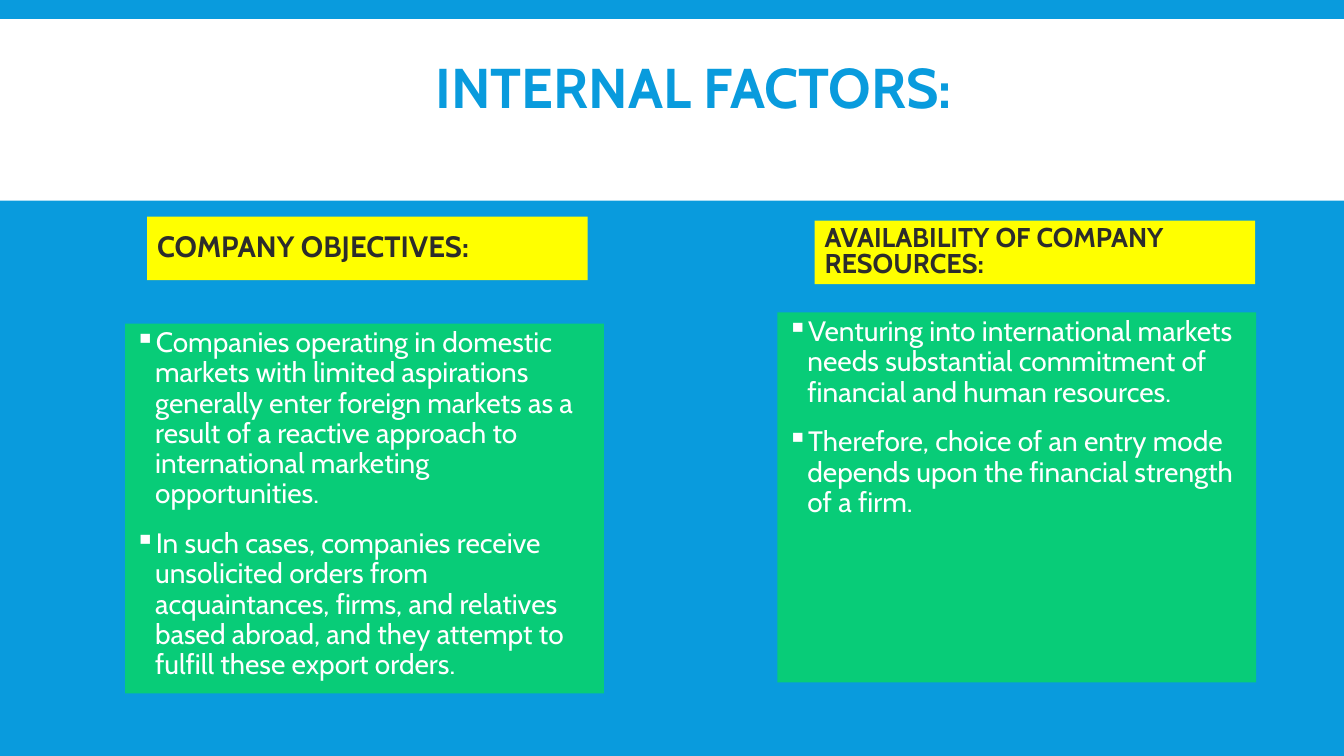
from dataclasses import dataclass

from lxml import etree
from pptx import Presentation
from pptx import util as u
from pptx.dml.color import RGBColor
from pptx.enum import shapes, text
from pptx.oxml import ns


@dataclass(frozen=True)
class Theme:
    font: str = "Cabin"
    blue: str = "099BDD"
    white: str = "FFFFFF"
    yellow: str = "FFFF00"
    green: str = "08CC78"
    dark: str = "2C2C2C"
    title: float = 40
    body: float = 20


THEME = Theme()
WIDE, HIGH = 13.33, 7.5
HEAD_W, HEAD_H = 4.37, 0.63
BODY_W, BODY_H = 4.75, 3.67

COLUMNS = [
    ((1.24, 2.15), (0.22, 1.06), "COMPANY OBJECTIVES:", 21, 0.9, [
        "Companies operating in domestic markets with limited aspirations generally enter foreign markets as a result of a reactive approach to international marketing opportunities.",
        "In such cases, companies receive unsolicited orders from acquaintances, firms, and relatives based abroad, and they attempt to fulfill these export orders.",
    ]),
    ((7.71, 2.19), (0.37, 0.91), "AVAILABILITY OF COMPANY RESOURCES:", 19.4, 0.8, [
        "Venturing into international markets needs substantial commitment of financial and human resources.",
        "Therefore, choice of an entry mode depends upon the financial strength of a firm.",
    ]),
]


def color(code):
    return RGBColor.from_string(code)


def panel(slide, box, fill):
    shape = slide.shapes.add_shape(
        shapes.MSO_SHAPE.RECTANGLE, *[u.Inches(side) for side in box])
    shape.shadow.inherit = False
    shape.fill.solid()
    shape.fill.fore_color.rgb = color(fill)
    shape.line.fill.background()
    return shape


def write(shape, lines, size, ink, space, anchor, bold=False):
    frame = shape.text_frame
    frame.text = "\n".join(lines)
    frame.word_wrap = True
    frame.auto_size = text.MSO_AUTO_SIZE.NONE
    frame.vertical_anchor = anchor
    for para in frame.paragraphs:
        para.alignment = text.PP_ALIGN.LEFT
        para.line_spacing = space
        for run in para.runs:
            run.font.name = THEME.font
            run.font.size = u.Pt(size)
            run.font.bold = bold
            run.font.color.rgb = color(ink)
    return frame.paragraphs


def gap(paras):
    for para in paras:
        para.space_before, para.space_after = u.Pt(12), u.Pt(2)


def bullet(para):
    props = para._p.get_or_add_pPr()
    props.set("marL", str(u.Inches(0.2)))
    props.set("indent", str(u.Inches(-0.2)))
    tint = etree.SubElement(props, ns.qn("a:buClr"))
    etree.SubElement(tint, ns.qn("a:srgbClr"), val=THEME.white)
    etree.SubElement(props, ns.qn("a:buChar"), char="▪")


def header(slide, box):
    left, top, width, height = box
    title = slide.shapes.title
    band = panel(slide, box, THEME.white)
    title._element.addprevious(band._element)
    title.left, title.top = u.Inches(left + 4.22), u.Inches(top + 0.02)
    title.width, title.height = u.Inches(width - 4.96), u.Inches(height - 0.4)
    write(title, ["INTERNAL FACTORS:"], THEME.title, THEME.blue, 0.85,
          text.MSO_ANCHOR.MIDDLE, True)


def column(slide, spot, shift, head, size, space, points):
    left, top = spot
    right, down = shift
    label = panel(slide, (left + right, top, HEAD_W, HEAD_H), THEME.yellow)
    gap(write(label, [head], size, THEME.dark, space,
              text.MSO_ANCHOR.MIDDLE, True))
    card = panel(slide, (left, top + down, BODY_W, BODY_H), THEME.green)
    paras = write(card, points, THEME.body, THEME.white, 0.9,
                  text.MSO_ANCHOR.TOP)
    gap(paras)
    for para in paras:
        bullet(para)


def main():
    deck = Presentation()
    deck.slide_width, deck.slide_height = u.Inches(WIDE), u.Inches(HIGH)
    slide = deck.slides.add_slide(deck.slide_layouts[5])
    slide.background.fill.solid()
    slide.background.fill.fore_color.rgb = color(THEME.blue)
    header(slide, (0, 0.19, WIDE, 1.8))
    for part in COLUMNS:
        column(slide, *part)
    deck.save("out.pptx")


if __name__ == "__main__":
    main()
